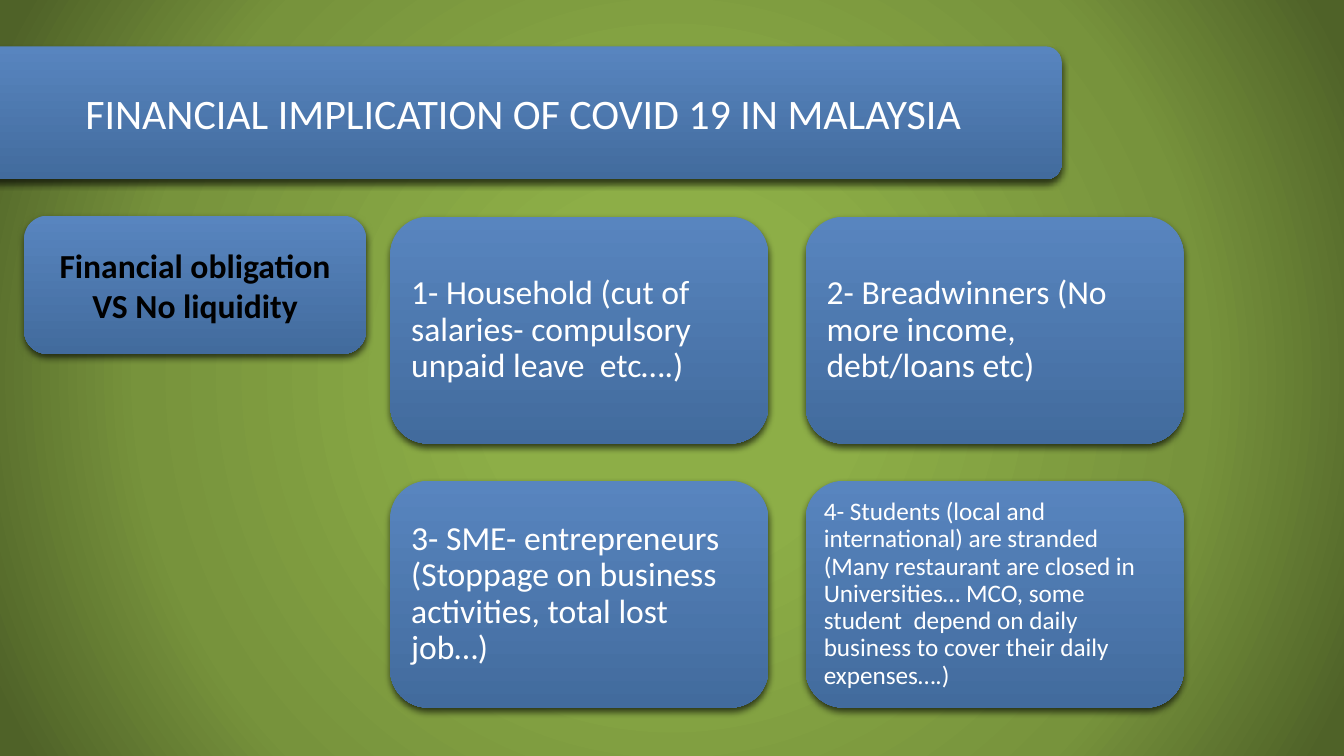
from lxml import etree
from pptx import Presentation
from pptx.dml.color import RGBColor
from pptx.enum.shapes import MSO_SHAPE
from pptx.enum.text import MSO_ANCHOR, PP_ALIGN
from pptx.oxml import parse_xml
from pptx.oxml.ns import nsdecls, qn
from pptx.util import Inches, Pt

ROUNDED = MSO_SHAPE.ROUNDED_RECTANGLE
MIDDLE = MSO_ANCHOR.MIDDLE
LEFT, CENTER = PP_ALIGN.LEFT, PP_ALIGN.CENTER

COLORS = {
    "panel_top": "5885BF",
    "panel_bottom": "426B9D",
    "light": "FFFFFF",
    "dark": "000000",
    "shadow": "000000",
    "glow": "8DAE47",
    "leaf": "77933C",
    "edge": "4F6228",
}
BACKGROUND_STOPS = [(0, "glow"), (23, "glow"), (69, "leaf"), (97, "edge")]

TITLE = "FINANCIAL IMPLICATION OF COVID 19 IN MALAYSIA"
LABEL = "Financial obligation VS No liquidity"
# text, font size, inset
CARDS = [
    ("1- Household (cut of salaries- compulsory unpaid leave  etc….)", 24, 0.1),
    ("2- Breadwinners (No more income, debt/loans etc)", 24, 0.1),
    ("3- SME- entrepreneurs (Stoppage on business activities, total lost job…)", 24, 0.1),
    ("4- Students (local and international) are stranded (Many restaurant are closed in "
     "Universities… MCO, some student  depend on daily business to cover their daily "
     "expenses….)", 18, 0.07),
]

CARD_COLUMNS = 2
CARD_LEFT, CARD_TOP = 3.87, 2.15
CARD_WIDTH, CARD_HEIGHT = 3.75, 2.25
CARD_GAP = 0.37


def paint_background(page):
    """Fill the page with a gradient that spreads from its centre."""
    page.background.fill.gradient()
    gradient = page.element.find(".//" + qn("a:gradFill"))
    for child in list(gradient):
        gradient.remove(child)
    stops = etree.SubElement(gradient, qn("a:gsLst"))
    for percent, color in BACKGROUND_STOPS:
        stop = etree.SubElement(stops, qn("a:gs"), pos=str(percent * 1000))
        etree.SubElement(stop, qn("a:srgbClr"), val=COLORS[color])
    spread = etree.SubElement(gradient, qn("a:path"), path="circle")
    sides = dict.fromkeys("ltrb", "50000")
    etree.SubElement(spread, qn("a:fillToRect"), **sides)


def add_shadow(box):
    box.element.spPr.append(parse_xml(
        f'<a:effectLst {nsdecls("a")}>'
        f'<a:outerShdw blurRad="{Pt(5)}" dist="{Pt(3)}" dir="5400000" rotWithShape="0">'
        f'<a:srgbClr val="{COLORS["shadow"]}"><a:alpha val="65000"/></a:srgbClr>'
        '</a:outerShdw></a:effectLst>'))


def add_panel(page, place, text, size, color="light", bold=False, align=LEFT,
              insets=(0.1, 0.05, 0.1, 0.05), corner=0.1667, line_spacing=1.0):
    """Add a shaded rounded box; insets run left, top, right, bottom."""
    box = page.shapes.add_shape(ROUNDED, *map(Inches, place))
    box.adjustments[0] = corner
    box.line.fill.background()
    box.fill.gradient()
    box.fill.gradient_angle = 270
    for stop, name in zip(box.fill.gradient_stops, ("panel_top", "panel_bottom")):
        stop.color.rgb = RGBColor.from_string(COLORS[name])
    add_shadow(box)

    frame = box.text_frame
    frame.word_wrap = True
    frame.vertical_anchor = MIDDLE
    for side, inset in zip(("left", "top", "right", "bottom"), insets):
        setattr(frame, f"margin_{side}", Inches(inset))
    para = frame.paragraphs[0]
    para.alignment = align
    para.line_spacing = line_spacing
    span = para.add_run()
    span.text = text
    span.font.color.rgb = RGBColor.from_string(COLORS[color])
    for name, value in {"name": "Calibri", "size": Pt(size), "bold": bold}.items():
        setattr(span.font, name, value)


def main():
    deck = Presentation()
    deck.slide_width, deck.slide_height = Inches(13.33), Inches(7.5)
    page = deck.slides.add_slide(deck.slide_layouts[6])
    paint_background(page)

    add_panel(page, (-0.34, 0.46, 10.87, 1.32), TITLE, 30,
              insets=(1.14, 0.05, 0.1, 0.05), corner=0.12)
    for index, (text, size, inset) in enumerate(CARDS):
        row, column = divmod(index, CARD_COLUMNS)
        left = CARD_LEFT + column * (CARD_WIDTH + CARD_GAP)
        top = CARD_TOP + row * (CARD_HEIGHT + CARD_GAP)
        add_panel(page, (left, top, CARD_WIDTH, CARD_HEIGHT), text, size,
                  insets=(inset,) * 4, line_spacing=0.9)
    add_panel(page, (0.24, 2.14, 3.39, 1.37), LABEL, 24,
              color="dark", bold=True, align=CENTER)

    deck.save("out.pptx")


if __name__ == "__main__":
    main()
